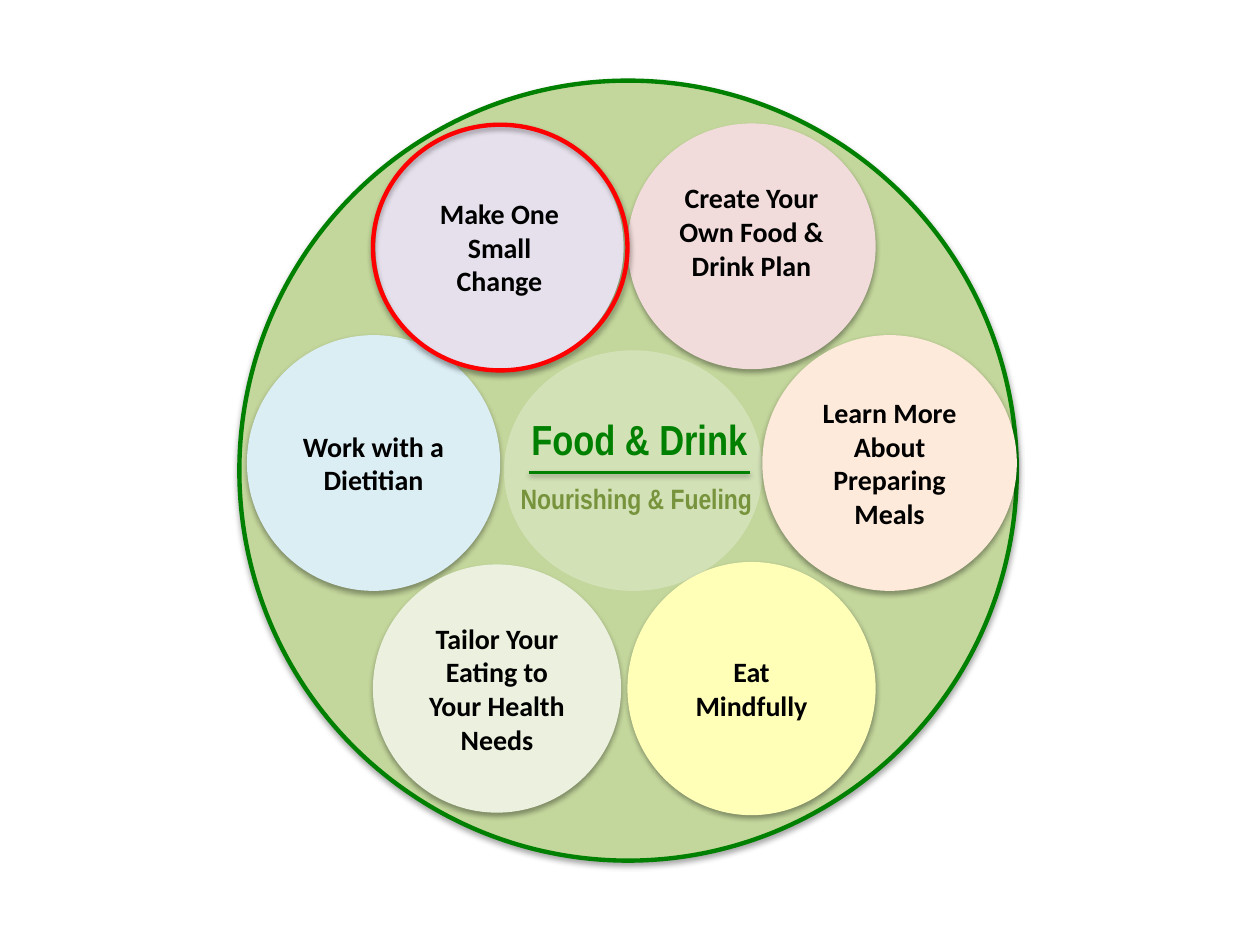
import lxml.etree
import pptx
import pptx.dml.color
import pptx.enum.shapes
import pptx.enum.text
import pptx.oxml.ns
import pptx.util

COLUMNS, ROWS = 100, 75  # grid cells of a tenth of an inch


def color(hex_string):
    return pptx.dml.color.RGBColor.from_string(hex_string)


def add_element(parent, tag, **attributes):
    values = {name: str(value) for name, value in attributes.items()}
    return lxml.etree.SubElement(parent, pptx.oxml.ns.qn(tag), values)


class WheelSlide:
    green = "008000"
    olive = "77933C"
    black = "000000"
    body_font = "Calibri"
    heading_font = "Arial Narrow"

    def __init__(self, presentation):
        self.slide = presentation.slides.add_slide(presentation.slide_layouts[6])
        self.cell_width = presentation.slide_width / COLUMNS
        self.cell_height = presentation.slide_height / ROWS
        self.shapes = self.slide.shapes

    def start_group(self):
        self.shapes = self.slide.shapes.add_group_shape().shapes

    def end_group(self):
        self.shapes = self.slide.shapes

    def place(self, column, row, width, height):
        return (round(column * self.cell_width), round(row * self.cell_height),
                round(width * self.cell_width), round(height * self.cell_height))

    def set_shadow(self, shape, opacity, distance):
        """Soft shadow straight below; an opacity of 0 means none."""
        effects = add_element(shape._element.spPr, "a:effectLst")
        if opacity:
            shadow = add_element(effects, "a:outerShdw", blurRad=pptx.util.Pt(3.1),
                                 dist=pptx.util.Pt(distance), dir=90 * 60000, rotWithShape=0)
            shade = add_element(shadow, "a:srgbClr", val=self.black)
            add_element(shade, "a:alpha", val=opacity * 1000)

    def add_text(self, frame, text, font_name, size, text_color):
        frame.word_wrap = True
        paragraph = frame.paragraphs[0]
        paragraph.alignment = pptx.enum.text.PP_ALIGN.CENTER
        run = paragraph.add_run()
        run.text = text
        run.font.name = font_name
        run.font.size = pptx.util.Pt(size)
        run.font.bold = True
        run.font.color.rgb = color(text_color)

    def circle(self, box, fill=None, outline=None, text=None, opacity=None,
               shadow=35, space_below=0):
        shape = self.shapes.add_shape(pptx.enum.shapes.MSO_SHAPE.OVAL, *self.place(*box))
        if fill:
            shape.fill.solid()
            shape.fill.fore_color.rgb = color(fill)
        else:
            shape.fill.background()
        if opacity:
            fill_color = shape._element.spPr.find(".//" + pptx.oxml.ns.qn("a:srgbClr"))
            add_element(fill_color, "a:alpha", val=opacity * 1000)
        if outline:
            shape.line.color.rgb = color(outline)
            shape.line.width = pptx.util.Pt(2.5)
        else:
            shape.line.fill.background()
        self.set_shadow(shape, shadow, 1.8)
        if text:
            frame = shape.text_frame
            frame.vertical_anchor = pptx.enum.text.MSO_ANCHOR.MIDDLE
            frame.margin_bottom += pptx.util.Pt(space_below)
            self.add_text(frame, text, self.body_font, 16, self.black)

    def heading(self, box, text, size, text_color):
        frame = self.shapes.add_textbox(*self.place(*box)).text_frame
        self.add_text(frame, text, self.heading_font, size, text_color)
        frame.auto_size = pptx.enum.text.MSO_AUTO_SIZE.SHAPE_TO_FIT_TEXT

    def rule(self, column, row, width):
        left, top, length, _ = self.place(column, row, width, 0)
        connector = self.shapes.add_connector(
            pptx.enum.shapes.MSO_CONNECTOR.STRAIGHT, left, top, left + length, top)
        connector.line.color.rgb = color(self.green)
        connector.line.width = pptx.util.Pt(1.5)
        self.set_shadow(connector, 38, 1.6)


def main():
    presentation = pptx.Presentation()
    presentation.slide_width = pptx.util.Inches(10)
    presentation.slide_height = pptx.util.Inches(7.5)
    wheel = WheelSlide(presentation)
    wheel.start_group()

    # Wheel and its hub
    wheel.circle((19, 6.4, 61.7, 61.9), "C3D69B", outline=wheel.green)
    wheel.circle((40, 27.8, 20.5, 19.1), "EBF1DE", opacity=42, shadow=0)
    wheel.heading((34.6, 32.3, 32.3, 5), "Food & Drink", 24, wheel.green)
    wheel.heading((39.1, 37.7, 22.8, 3.7), "Nourishing & Fueling", 16, wheel.olive)
    wheel.rule(42, 37.5, 17.5)

    # Topics around the hub: box, fill, text, extra points below the text
    topics = [
        ((19.6, 26.6, 20.1, 20.3), "DBEEF4", "Work with a Dietitian", 0),
        ((29.8, 9.8, 19.7, 19.6), "E6E0EC", "Make One Small Change", 0),
        ((49.8, 9.8, 19.7, 19.5), "F2DCDB", "Create Your Own Food & Drink Plan", 17),
        ((60.5, 26.6, 20.2, 20.3), "FDEADA", "Learn More About Preparing Meals", 0),
        ((49.8, 44.6, 19.7, 20.1), "FFFFB8", "Eat Mindfully", 0),
        ((29.6, 44.8, 19.7, 19.7), "EBF1DE", "Tailor Your Eating to Your Health Needs", 0),
    ]
    for box, fill, text, space_below in topics:
        wheel.circle(box, fill, text=text, space_below=space_below)
    wheel.end_group()

    # Ring marking the chosen topic
    wheel.circle((29.6, 9.9, 20.2, 19.5), outline="FF0000")

    presentation.save("out.pptx")


if __name__ == "__main__":
    main()
